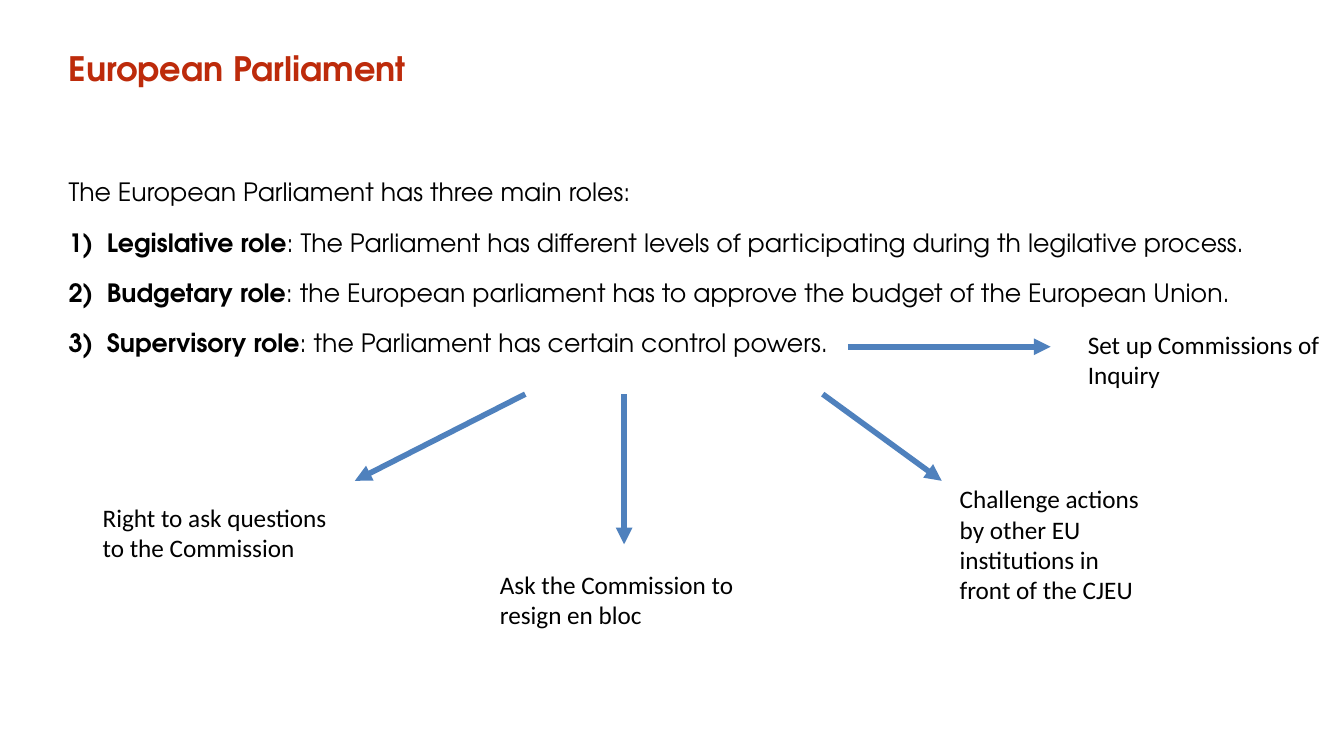
from lxml.etree import SubElement
from pptx import Presentation
from pptx.dml.color import RGBColor
from pptx.enum.shapes import MSO_CONNECTOR
from pptx.enum.text import MSO_ANCHOR, MSO_AUTO_SIZE, PP_ALIGN
from pptx.oxml.ns import qn
from pptx.util import Inches, Pt

# Content
TITLE = "European Parliament"
INTRO = "The European Parliament has three main roles:"
ROLES = [
    ("Legislative role", ": The Parliament has different levels of participating during th legilative process."),
    ("Budgetary role", ": the European parliament has to approve the budget of the European Union."),
    ("Supervisory role", ": the Parliament has certain control powers."),
]
# Each power: text, box (left, top, width, height), arrow (from x, y, to x, y)
POWERS = [
    ("Right to ask questions to the Commission", (0.92, 4.93, 2.6, 0.71), (5.21, 3.91, 3.52, 4.77)),
    ("Ask the Commission to resign en bloc", (4.86, 5.6, 3.07, 0.71), (6.19, 3.91, 6.19, 5.4)),
    ("Challenge actions by other EU institutions in front of the CJEU", (9.42, 4.75, 2, 1.31), (8.16, 3.91, 9.34, 4.77)),
    ("Set up Commissions of Inquiry", (10.69, 3.22, 2.52, 0.71), (8.41, 3.44, 10.42, 3.44)),
]


class Theme:
    red = RGBColor.from_string("BD2B0B")
    black = RGBColor.from_string("000000")
    blue = RGBColor.from_string("4F81BD")
    head = "TeX Gyre Adventor"
    note = "Calibri"
    big, text, line = Pt(24), Pt(18), Pt(4)
    gap = Pt(3.6)


def add_run(para, text, face, size, color, bold=False):
    run = para.add_run()
    run.text = text
    font = run.font
    font.name, font.size, font.bold = face, size, bold
    font.color.rgb = color


def place(shape, left, top, width, height):
    shape.left, shape.top = Inches(left), Inches(top)
    shape.width, shape.height = Inches(width), Inches(height)
    frame = shape.text_frame
    frame.word_wrap = True
    frame.auto_size = MSO_AUTO_SIZE.NONE
    frame.vertical_anchor = MSO_ANCHOR.TOP
    return frame


def set_list(para, numbered):
    props = para._p.get_or_add_pPr()
    indent = Inches(0.38) if numbered else 0
    props.set("marL", str(indent))
    props.set("indent", str(-indent))
    if numbered:
        SubElement(props, qn("a:buFont"), typeface=Theme.head)
        SubElement(props, qn("a:buAutoNum"), type="arabicParenR")
    else:
        SubElement(props, qn("a:buNone"))
    para.alignment = PP_ALIGN.JUSTIFY
    para.line_spacing = 1.5
    para.space_before = Theme.gap if numbered else Pt(0)


def add_arrow(slide, ends):
    arrow = slide.shapes.add_connector(MSO_CONNECTOR.STRAIGHT, *map(Inches, ends))
    arrow.line.color.rgb = Theme.blue
    arrow.line.width = Theme.line
    SubElement(arrow.line._get_or_add_ln(), qn("a:tailEnd"), type="triangle")
    SubElement(arrow._element.spPr, qn("a:effectLst"))


def add_note(slide, text, box):
    shape = slide.shapes.add_textbox(*map(Inches, box))
    frame = shape.text_frame
    frame.word_wrap = True
    frame.auto_size = MSO_AUTO_SIZE.SHAPE_TO_FIT_TEXT
    add_run(frame.paragraphs[0], text, Theme.note, Theme.text, Theme.black)


def main():
    deck = Presentation()
    deck.slide_width, deck.slide_height = Inches(13.33), Inches(7.5)
    slide = deck.slides.add_slide(deck.slide_layouts[1])

    # Title
    para = place(slide.shapes.title, 0.58, 0.52, 12.28, 0.71).paragraphs[0]
    para.alignment = PP_ALIGN.LEFT
    para.line_spacing = Pt(22)
    para.space_before = Pt(0)
    add_run(para, TITLE, Theme.head, Theme.big, Theme.red, True)

    # Numbered roles
    frame = place(slide.placeholders[1], 0.58, 1.55, 12.28, 4.72)
    style = (Theme.head, Theme.text, Theme.black)
    intro = frame.paragraphs[0]
    set_list(intro, False)
    add_run(intro, INTRO, *style)
    for name, detail in ROLES:
        para = frame.add_paragraph()
        set_list(para, True)
        add_run(para, name, *style, True)
        add_run(para, detail, *style)

    # Control powers
    for text, box, ends in POWERS:
        add_arrow(slide, ends)
        add_note(slide, text, box)

    deck.save("out.pptx")


if __name__ == "__main__":
    main()
